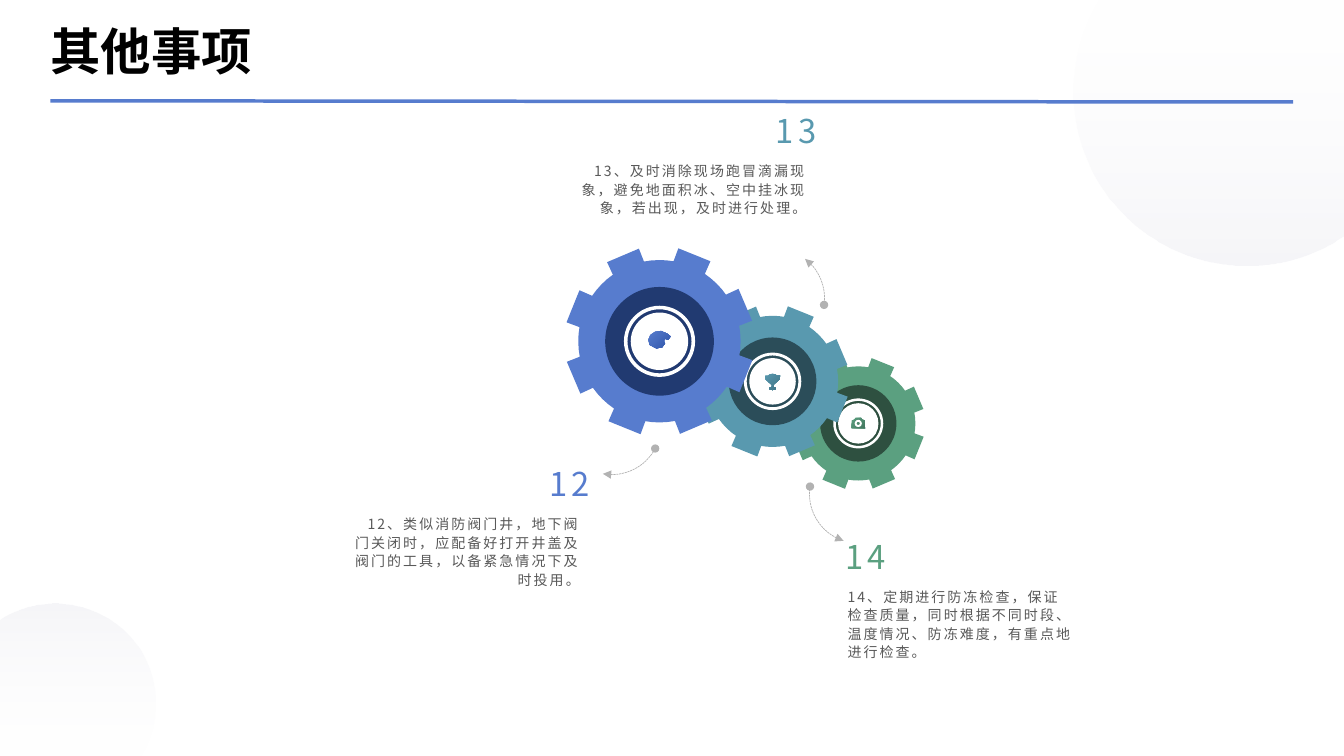
from math import cos, radians, sin

from lxml.etree import SubElement
from pptx import Presentation
from pptx.dml.color import RGBColor
from pptx.enum.shapes import MSO_CONNECTOR, MSO_SHAPE
from pptx.enum.dml import MSO_LINE
from pptx.enum.text import MSO_ANCHOR, PP_ALIGN
from pptx.oxml.ns import qn
from pptx.util import Cm, Pt

FONT = "Noto Sans CJK SC"
WIDTH, HEIGHT = 33.87, 19.05
COLORS = {
    "blue": "577CCE", "blue_dark": "213A71", "blue_deep": "3257AA",
    "teal": "5999AF", "teal_dark": "2B4D59", "teal_deep": "407486",
    "green": "5BA080", "green_dark": "2E5040", "green_deep": "447860",
    "white": "FFFFFF", "black": "000000", "gray": "595959", "mist": "D8D8E4",
}
RGB = {name: RGBColor.from_string(value) for name, value in COLORS.items()}

prs = Presentation()
prs.slide_width, prs.slide_height = Cm(WIDTH), Cm(HEIGHT)
slide = prs.slides.add_slide(prs.slide_layouts[6])
shapes = slide.shapes


def add_polygon(points, colors, angle=0):
    """Draw a closed outline in cm; two colours make a gradient."""
    pts = [(Cm(x), Cm(y)) for x, y in points]
    builder = shapes.build_freeform(*pts[0])
    builder.add_line_segments(pts[1:], close=True)
    sp = builder.convert_to_shape()
    sp.shadow.inherit = False
    sp.line.fill.background()
    if len(colors) == 1:
        sp.fill.solid()
        sp.fill.fore_color.rgb = RGB[colors[0]]
    else:
        sp.fill.gradient()
        sp.fill.gradient_angle = angle
        for stop, color, position in zip(sp.fill.gradient_stops, colors, (0, 1)):
            stop.color.rgb = RGB[color]
            stop.position = position
    return sp


def add_text(text, left, top, width, height, size, color, align, spacing=0, inset=True):
    sp = shapes.add_textbox(Cm(left), Cm(top), Cm(width), Cm(height))
    tf = sp.text_frame
    tf.word_wrap = True
    if not inset:
        tf.margin_left = tf.margin_right = tf.margin_top = tf.margin_bottom = 0
        tf.vertical_anchor = MSO_ANCHOR.MIDDLE
    p = tf.paragraphs[0]
    p.text = text
    p.alignment = align
    r = p.runs[0]
    r.font.size = Pt(size)
    r.font.color.rgb = RGB[color]
    r.font.name = FONT
    rPr = r.font._element
    SubElement(rPr, qn("a:ea"), typeface=FONT)
    if spacing:
        rPr.set("spc", str(spacing))
    return p


# Background circles, cut off at the slide edges
for cx, cy, radius, angle in [(31.42, 2.32, 4.37, 270), (1.4, 17.72, 2.52, 90)]:
    edge = [(cx + radius * cos(radians(a)), cy + radius * sin(radians(a)))
            for a in range(0, 360, 2)]
    clipped = [(min(max(x, 0), WIDTH), min(max(y, 0), HEIGHT)) for x, y in edge]
    sp = add_polygon(clipped, ("white", "mist"), angle)
    for clr, alpha in zip(sp._element.iter(qn("a:srgbClr")), ("10000", "24000")):
        SubElement(clr, qn("a:alpha"), val=alpha)

# Title and rule
rule = shapes.add_connector(MSO_CONNECTOR.STRAIGHT, Cm(1.27), Cm(2.54), Cm(32.59), Cm(2.57))
rule.line.color.rgb = RGB["blue"]
rule.line.width = Pt(2.5)
SubElement(rule._element.spPr, qn("a:effectLst"))
p = add_text("其他事项", 1.27, 0.43, 31.32, 1.7, 36, "black", PP_ALIGN.LEFT, inset=False)
p.runs[0].font.bold = True

# Icon outlines around the gear centre; trophy and camera are mirrored halves
palette = [(0.2, -0.19), (0.04, -0.26), (-0.11, -0.24), (-0.23, -0.16), (-0.28, -0.04),
           (-0.25, 0.09), (-0.08, 0.18), (0.07, 0.15), (0.14, 0.06), (0.11, -0.01),
           (0.14, -0.06), (0.22, -0.04), (0.28, -0.12)]
trophy = [(0, -0.19), (0.08, -0.17), (0.11, -0.14), (0.19, -0.14), (0.18, -0.05),
          (0.09, 0.03), (0.02, 0.09), (0.02, 0.14), (0.08, 0.16), (0.08, 0.2), (0, 0.22)]
camera = [(0, -0.14), (0.07, -0.14), (0.1, -0.09), (0.16, -0.08), (0.17, 0.12), (0, 0.12)]
trophy += [(-x, y) for x, y in reversed(trophy)]
camera += [(-x, y) for x, y in reversed(camera)]

# Gears: eight teeth each, every part in proportion to the tip radius
BASE = 0.856
tooth = [(-12, BASE), (-10.5, 1), (10.5, 1), (12, BASE), (17, BASE), (22.5, BASE), (28, BASE)]
gears = [
    ("green", 21.63, 10.67, 1.68, camera),
    ("teal", 19.47, 9.61, 1.93, trophy),
    ("blue", 16.62, 8.6, 2.39, palette),
]
for color, cx, cy, tip, icon in gears:
    outline = []
    for k in range(8):
        for offset, ratio in tooth:
            a = radians(22 + 45 * k + offset)
            outline.append((cx + tip * ratio * sin(a), cy - tip * ratio * cos(a)))
    add_polygon(outline, (color,))
    discs = [
        (MSO_SHAPE.OVAL, 0.573 * tip, color + "_dark"),
        (MSO_SHAPE.DONUT, 0.375 * tip, "white"),
        (MSO_SHAPE.OVAL, 0.303 * tip, "white"),
    ]
    add_icon_after = len(discs)
    if icon is camera:
        discs.append((MSO_SHAPE.DONUT, 0.09, "white"))
    for i, (kind, radius, fill) in enumerate(discs):
        if i == add_icon_after - 1:
            icon_points = [(cx + x, cy + y) for x, y in icon]
        sp = shapes.add_shape(kind, Cm(cx - radius), Cm(cy - radius),
                              Cm(2 * radius), Cm(2 * radius))
        sp.shadow.inherit = False
        sp.fill.solid()
        sp.fill.fore_color.rgb = RGB[fill]
        sp.line.fill.background()
        if kind == MSO_SHAPE.DONUT:
            sp.adjustments[0] = 0.05 if radius > 0.1 else 0.27
        if i == add_icon_after - 1:
            add_polygon(icon_points, (color, color + "_deep"), 315)

# Curved arrows: angles in degrees, clockwise from the right
arcs = [
    (14.17, 9.47, 28.2, 100.25, "oval", "triangle"),
    (20.4, 11.2, 108, 188.5, "triangle", "oval"),
    (18.29, 6.27, 307.3, 7.8, "triangle", "oval"),
]
for left, top, start, end, head, tail in arcs:
    sp = shapes.add_shape(MSO_SHAPE.ARC, Cm(left), Cm(top), Cm(2.49), Cm(2.49))
    sp.shadow.inherit = False
    sp.fill.background()
    sp.adjustments[0], sp.adjustments[1] = start * 0.6, end * 0.6
    sp.line.color.rgb = RGB["black"]
    sp.line.width = Pt(0.5)
    sp.line.dash_style = MSO_LINE.SQUARE_DOT
    ln = sp._element.spPr.find(qn("a:ln"))
    SubElement(next(ln.iter(qn("a:srgbClr"))), qn("a:alpha"), val="30000")
    SubElement(ln, qn("a:headEnd"), type=head)
    SubElement(ln, qn("a:tailEnd"), type=tail)

# Numbered notes
notes = [
    ("12", "类似消防阀门井，地下阀门关闭时，应配备好打开井盖及阀门的工具，以备紧急情况下及时投用。",
     8.69, 8.69, 12.83, "blue", PP_ALIGN.RIGHT),
    ("13", "及时消除现场跑冒滴漏现象，避免地面积冰、空中挂冰现象，若出现，及时进行处理。",
     14.4, 14.4, 3.94, "teal", PP_ALIGN.RIGHT),
    ("14", "定期进行防冻检查，保证检查质量，同时根据不同时段、温度情况、防冻难度，有重点地进行检查。",
     21.11, 21.31, 14.66, "green", PP_ALIGN.LEFT),
]
for number, note, left, number_left, top, color, align in notes:
    p = add_text(f"{number}、{note}", left, top, 6.17, 2.44, 10, "gray", align, 150)
    p.line_spacing = 1.1
    add_text(number, number_left, top - 1.22, 6.17, 1.14, 23.4, color, align, 300, inset=False)

prs.save("out.pptx")
